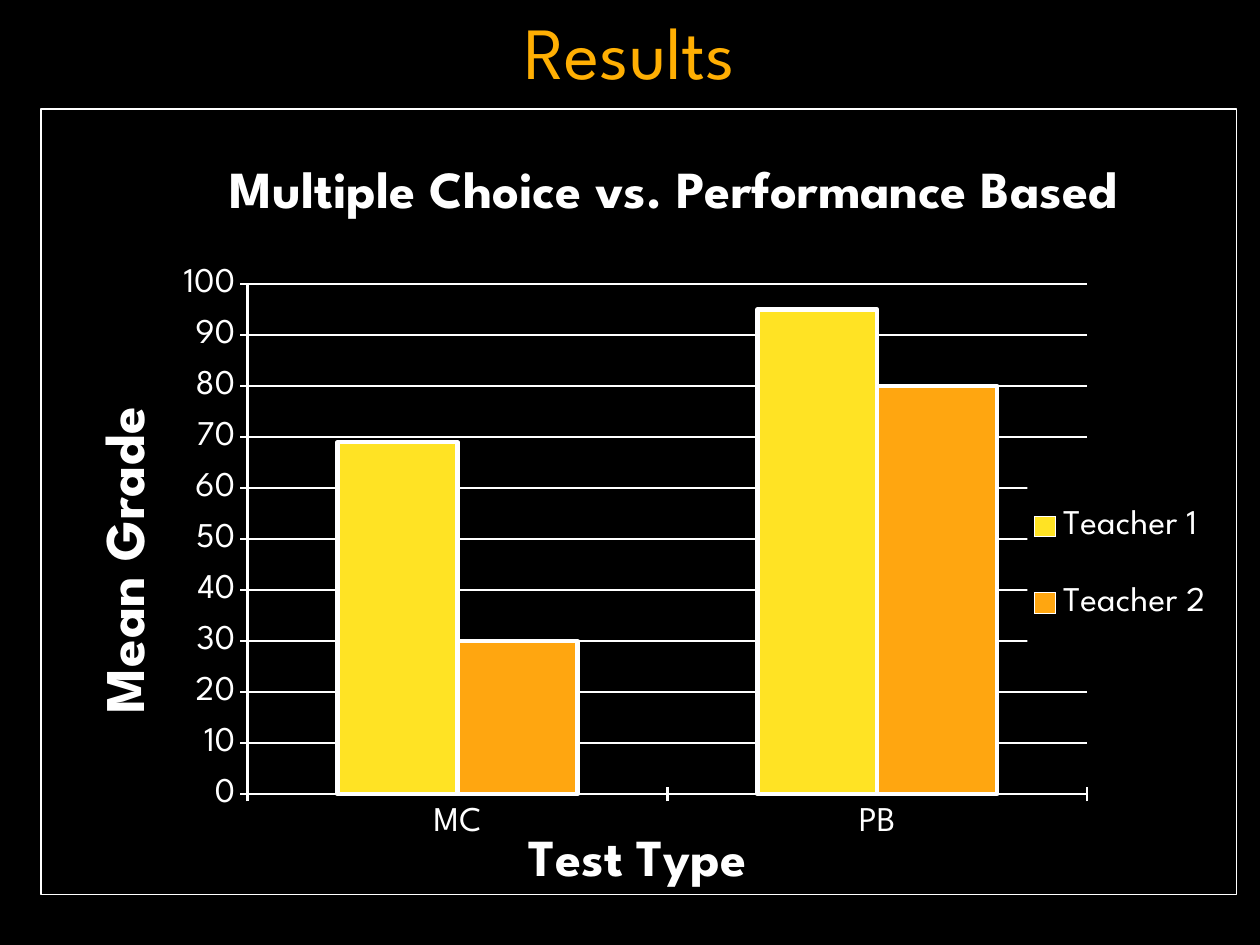
from lxml import etree
from pptx import Presentation
from pptx.chart.data import CategoryChartData
from pptx.dml.color import RGBColor
from pptx.enum.chart import XL_CHART_TYPE as ChartType, XL_LEGEND_POSITION as LegendPosition
from pptx.enum.chart import XL_TICK_MARK as TickMark
from pptx.enum.text import MSO_ANCHOR as Anchor, PP_ALIGN as Align
from pptx.oxml import parse_xml
from pptx.oxml.ns import nsdecls, qn
from pptx.util import Inches, Pt

FONT = "League Spartan"
WHITE, BLACK = "FFFFFF", "000000"
SERIES = [("Teacher 1", (69, 95), "FFE324"), ("Teacher 2", (30, 80), "FFA610")]


def color(value):
    """Turn a hex string into a colour."""
    return RGBColor.from_string(value)


def style_font(font, size, value=WHITE, bold=False):
    """Set the face, size, colour and weight of a font."""
    font.name, font.size, font.bold = FONT, Pt(size), bold
    font.color.rgb = color(value)


def style_line(line, width):
    """Make a line solid white."""
    line.color.rgb = color(WHITE)
    line.width = Pt(width)


def set_layout(element, index, x, y, w=None, h=None):
    """Place a chart part at fractions of the chart's size."""
    for old in element.findall(qn("c:layout")):
        element.remove(old)
    layout = etree.Element(qn("c:layout"))
    manual = etree.SubElement(layout, qn("c:manualLayout"))
    settings = [("xMode", "edge"), ("yMode", "edge"), ("x", x), ("y", y)]
    if w is not None:
        settings += [("w", w), ("h", h)]
    if element.tag == qn("c:plotArea"):
        settings.insert(0, ("layoutTarget", "inner"))
    for name, value in settings:
        etree.SubElement(manual, qn(f"c:{name}")).set("val", str(value))
    element.insert(index, layout)


def set_title(owner, text, size, x, y, rotation=0):
    """Write and place the title of a chart or an axis."""
    owner.has_title = True
    title = owner.chart_title if hasattr(owner, "chart_title") else owner.axis_title
    frame = title.text_frame
    frame.text = text
    style_font(frame.paragraphs[0].font, size, bold=True)
    element = frame.paragraphs[0]._p.getparent()
    element.find(qn("a:bodyPr")).set("rot", str(rotation * 60000))
    set_layout(element.getparent().getparent(), 1, x, y)


def style_axis(axis):
    """Give an axis white lines, crossing ticks and large labels."""
    axis.major_tick_mark = TickMark.CROSS
    axis.minor_tick_mark = TickMark.NONE
    style_line(axis.format.line, 1.5)
    style_font(axis.tick_labels.font, 20)


def add_border(chart):
    """Draw a thin white frame around the chart."""
    chart._chartSpace.find(qn("c:chart")).addnext(parse_xml(
        f'<c:spPr {nsdecls("c", "a")}><a:noFill/><a:ln w="{Pt(0.75)}"><a:solidFill>'
        f'<a:srgbClr val="{WHITE}"/></a:solidFill></a:ln></c:spPr>'))


def add_legend(chart):
    """Set the legend on a black ground that keeps gridlines off its labels."""
    chart.has_legend = True
    legend = chart.legend
    legend.position = LegendPosition.RIGHT
    legend.include_in_layout = False
    style_font(legend.font, 20)
    set_layout(legend._element, 1, 0.825, 0.455, 0.155, 0.25)
    legend._element.find(qn("c:txPr")).addprevious(parse_xml(
        f'<c:spPr {nsdecls("c", "a")}><a:solidFill><a:srgbClr val="{BLACK}"/></a:solidFill>'
        '<a:ln><a:noFill/></a:ln></c:spPr>'))


def add_heading(page, left, top, width, height):
    """Write the slide's heading."""
    box = page.shapes.add_textbox(left, top, width, height)
    frame = box.text_frame
    frame.word_wrap = True
    frame.vertical_anchor = Anchor.MIDDLE
    frame.margin_bottom = Inches(0.11)
    para = frame.paragraphs[0]
    para.text = "Results"
    para.alignment = Align.CENTER
    style_font(para.font, 42, "FFAF03")


def add_grade_chart(page, left, top, width, height):
    """Draw the column chart of mean grades by test type."""
    data = CategoryChartData()
    data.categories = ["MC", "PB"]
    for name, values, _ in SERIES:
        data.add_series(name, values)
    chart = page.shapes.add_chart(
        ChartType.COLUMN_CLUSTERED, left, top, width, height, data).chart
    style_font(chart.font, 10)
    add_border(chart)
    set_title(chart, "Multiple Choice vs. Performance Based", 30, 0.15, 0.06)

    grades, tests = chart.value_axis, chart.category_axis
    grades.minimum_scale, grades.maximum_scale, grades.major_unit = 0, 100, 10
    grades.has_major_gridlines = True
    style_line(grades.major_gridlines.format.line, 1.5)
    for axis in (grades, tests):
        style_axis(axis)
    set_title(tests, "Test Type", 30, 0.4, 0.91)
    set_title(grades, "Mean Grade", 32, 0.04, 0.37, rotation=-90)

    plot = chart.plots[0]
    plot.gap_width, plot.overlap, plot.vary_by_categories = 150, 0, False
    for series, (_, _, fill) in zip(plot.series, SERIES):
        series.format.fill.solid()
        series.format.fill.fore_color.rgb = color(fill)
        style_line(series.format.line, 2.5)
    set_layout(chart._chartSpace.find(".//" + qn("c:plotArea")), 0, 0.173, 0.223, 0.702, 0.649)
    add_legend(chart)


def main():
    """Build the results slide."""
    deck = Presentation()
    deck.slide_width, deck.slide_height = Inches(10), Inches(7.5)
    page = deck.slides.add_slide(deck.slide_layouts[6])
    page.background.fill.solid()
    page.background.fill.fore_color.rgb = color(BLACK)
    add_heading(page, Inches(0.67), Inches(0), Inches(8.66), Inches(0.86))
    add_grade_chart(page, Inches(0.32), Inches(0.86), Inches(9.5), Inches(6.31))
    deck.save("out.pptx")


if __name__ == "__main__":
    main()
